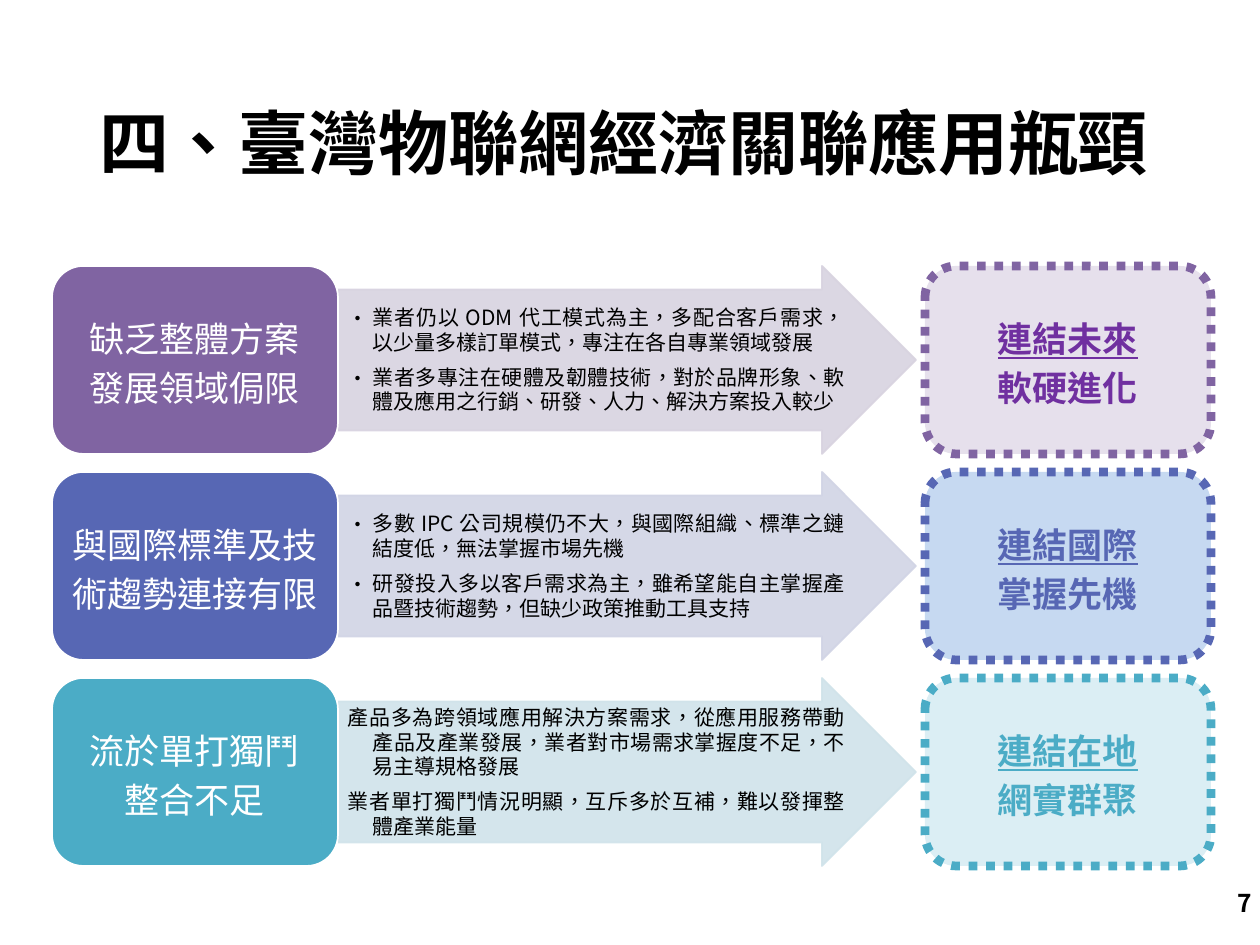
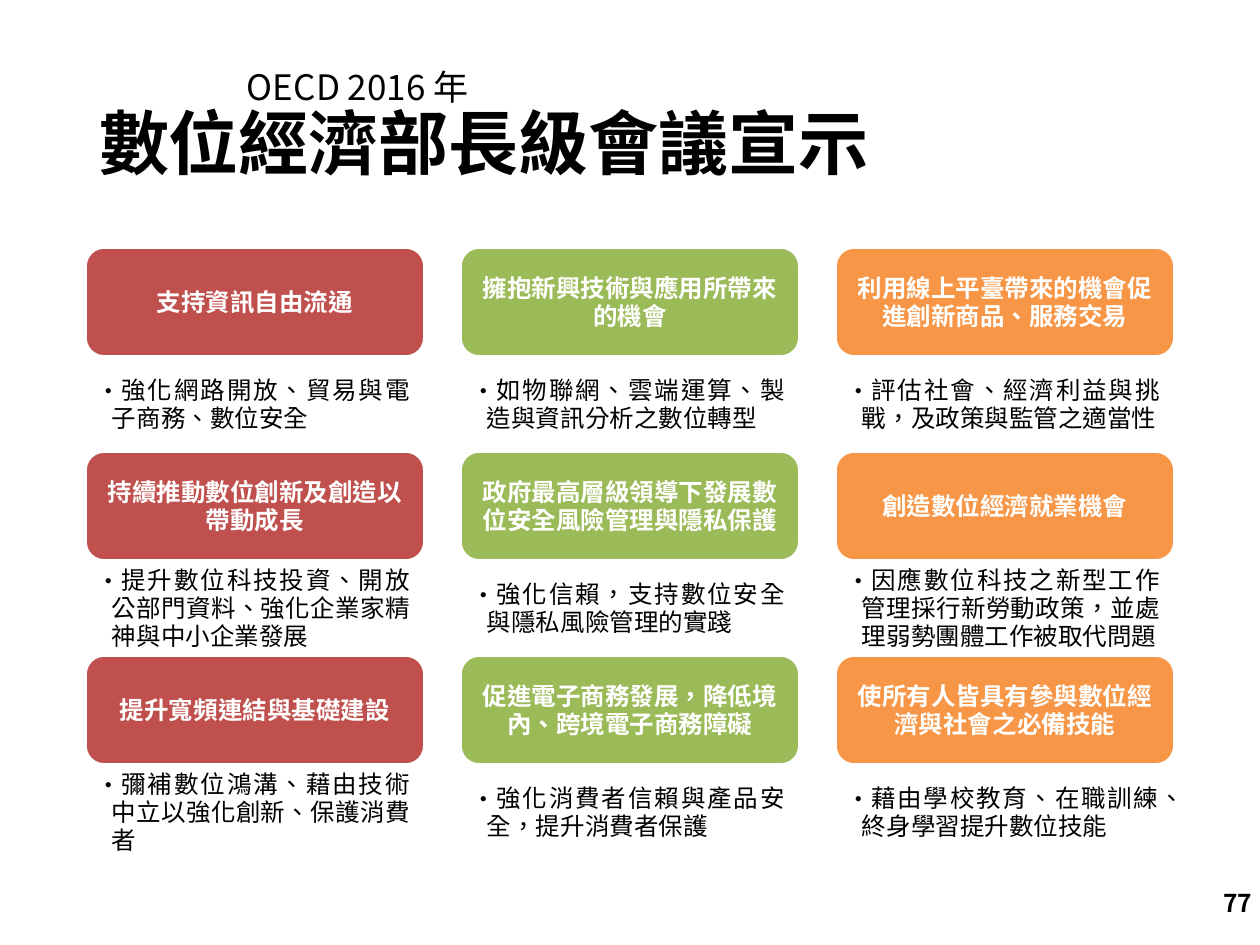
import pptx
import pptx.util
import pptx.dml.color
import pptx.enum.dml
import pptx.enum.shapes
import pptx.enum.text
import pptx.oxml
import pptx.oxml.ns

SHAPES = pptx.enum.shapes.MSO_SHAPE
ALIGN = pptx.enum.text.PP_ALIGN
FONT = "Noto Sans CJK SC"
LANGUAGE = "zh-TW"
BLACK = "000000"
WHITE = "FFFFFF"
PURPLE, INDIGO, TEAL = "8064A2", "5767B4", "4BACC6"
RED, GREEN, ORANGE = "C0504D", "9BBB59", "F79646"
PIXELS_PER_INCH = 126
LEFT_EDGE = 86
DEFAULT_MARGINS = (13, 6, 13, 6)

BOTTLENECKS = [
    dict(
        problem=["缺乏整體方案", "發展領域侷限"],
        causes=[
            "業者仍以 ODM 代工模式為主，多配合客戶需求，以少量多樣訂單模式，專注在各自專業領域發展",
            "業者多專注在硬體及韌體技術，對於品牌形象、軟體及應用之行銷、研發、人力、解決方案投入較少",
        ],
        bullet="•",
        answer=["連結未來", "軟硬進化"],
        color=PURPLE, arrow_fill="D8D3E0", answer_fill="E6E0EC", answer_color="7030A0",
    ),
    dict(
        problem=["與國際標準及技", "術趨勢連接有限"],
        causes=[
            "多數 IPC 公司規模仍不大，與國際組織、標準之鏈結度低，無法掌握市場先機",
            "研發投入多以客戶需求為主，雖希望能自主掌握產品暨技術趨勢，但缺少政策推動工具支持",
        ],
        bullet="•",
        answer=["連結國際", "掌握先機"],
        color=INDIGO, arrow_fill="D1D4E5", answer_fill="C6D9F1", answer_color=INDIGO,
    ),
    dict(
        problem=["流於單打獨鬥", "整合不足"],
        causes=[
            "產品多為跨領域應用解決方案需求，從應用服務帶動產品及產業發展，業者對市場需求掌握度不足，不易主導規格發展",
            "業者單打獨鬥情況明顯，互斥多於互補，難以發揮整體產業能量",
        ],
        bullet=None,
        answer=["連結在地", "網實群聚"],
        color=TEAL, arrow_fill="D0E3EA", answer_fill="DBEEF4", answer_color=TEAL,
    ),
]

DECLARATIONS = [
    (RED, [
        ("支持資訊自由流通", "強化網路開放、貿易與電子商務、數位安全"),
        ("持續推動數位創新及創造以帶動成長",
         "提升數位科技投資、開放公部門資料、強化企業家精神與中小企業發展"),
        ("提升寬頻連結與基礎建設", "彌補數位鴻溝、藉由技術中立以強化創新、保護消費者"),
    ]),
    (GREEN, [
        ("擁抱新興技術與應用所帶來的機會", "如物聯網、雲端運算、製造與資訊分析之數位轉型"),
        ("政府最高層級領導下發展數位安全風險管理與隱私保護",
         "強化信賴，支持數位安全與隱私風險管理的實踐"),
        ("促進電子商務發展，降低境內、跨境電子商務障礙",
         "強化消費者信賴與產品安全，提升消費者保護"),
    ]),
    (ORANGE, [
        ("利用線上平臺帶來的機會促進創新商品、服務交易",
         "評估社會、經濟利益與挑戰，及政策與監管之適當性"),
        ("創造數位經濟就業機會",
         "因應數位科技之新型工作管理採行新勞動政策，並處理弱勢團體工作被取代問題"),
        ("使所有人皆具有參與數位經濟與社會之必備技能",
         "藉由學校教育、在職訓練、終身學習提升數位技能"),
    ]),
]


def px(length):
    return pptx.util.Emu(round(length * 914400 / PIXELS_PER_INCH))


def rgb(color):
    return pptx.dml.color.RGBColor.from_string(color)


def add_element(parent, tag, **attributes):
    element = pptx.oxml.parse_xml(f"<a:{tag} {pptx.oxml.ns.nsdecls('a')}/>")
    for name, value in attributes.items():
        element.set(name, str(value))
    parent.append(element)


def set_hanging_indent(paragraph, indent, bullet):
    properties = paragraph._p.get_or_add_pPr()
    properties.set("marL", str(px(indent)))
    properties.set("indent", str(-px(indent)))
    if bullet:
        add_element(properties, "buFont", typeface=FONT)
        add_element(properties, "buChar", char=bullet)
    else:
        add_element(properties, "buNone")


def write_text(shape, lines, size, color=BLACK, bold=False, align=ALIGN.LEFT,
               line_spacing=None, space_after=None, indent=None, bullet=None,
               underline_first=False, margins=DEFAULT_MARGINS):
    frame = shape.text_frame
    frame.word_wrap = True
    frame.auto_size = pptx.enum.text.MSO_AUTO_SIZE.NONE
    frame.vertical_anchor = pptx.enum.text.MSO_ANCHOR.MIDDLE
    frame.margin_left, frame.margin_top, frame.margin_right, frame.margin_bottom = map(px, margins)
    for index, line in enumerate(lines):
        paragraph = frame.add_paragraph() if index else frame.paragraphs[0]
        paragraph.alignment = align
        if line_spacing:
            paragraph.line_spacing = pptx.util.Pt(line_spacing)
        if space_after:
            paragraph.space_after = pptx.util.Pt(space_after)
        if indent:
            paragraph.level = 1
            set_hanging_indent(paragraph, indent, bullet)
        run = paragraph.add_run()
        run.text = line
        font = run.font
        font.name = FONT
        font.size = pptx.util.Pt(size)
        font.bold = bold
        font.color.rgb = rgb(color)
        if underline_first and index == 0:
            font.underline = True
        properties = run._r.get_or_add_rPr()
        properties.set("lang", LANGUAGE)
        add_element(properties, "ea", typeface=FONT)


def add_text(slide, box, lines, size, **text_format):
    shape = slide.shapes.add_textbox(*map(px, box))
    write_text(shape, lines, size, **text_format)


def add_block(slide, kind, box, fill, line=WHITE, line_width=1):
    shape = slide.shapes.add_shape(kind, *map(px, box))
    shape.shadow.inherit = False
    shape.fill.solid()
    shape.fill.fore_color.rgb = rgb(fill)
    shape.line.color.rgb = rgb(line)
    shape.line.width = pptx.util.Pt(line_width)
    return shape


def add_cause_arrow(slide, top, row):
    arrow = add_block(slide, SHAPES.RIGHT_ARROW, (338, top, 578, 188),
                      row["arrow_fill"], row["arrow_fill"])
    arrow.adjustments[0] = 0.75
    arrow.adjustments[1] = 0.5
    for color in arrow._element.spPr.iter(pptx.oxml.ns.qn("a:srgbClr")):
        add_element(color, "alpha", val=90000)
    write_text(arrow, row["causes"], 12, align=ALIGN.JUSTIFY, line_spacing=14, space_after=6,
               indent=25, bullet=row["bullet"], margins=(10, 0, 0, 0))


def add_bottleneck_row(slide, top, row):
    add_cause_arrow(slide, top, row)
    problem = add_block(slide, SHAPES.ROUNDED_RECTANGLE, (52, top, 286, 188), row["color"])
    write_text(problem, row["problem"], 20, color=WHITE, align=ALIGN.CENTER,
               line_spacing=28, margins=(10, 5, 10, 5))
    answer = add_block(slide, SHAPES.ROUNDED_RECTANGLE, (925, top, 286, 188),
                       row["answer_fill"], row["color"], 5)
    answer.line.dash_style = pptx.enum.dml.MSO_LINE.ROUND_DOT
    write_text(answer, row["answer"], 20, color=row["answer_color"], bold=True,
               align=ALIGN.CENTER, line_spacing=28, underline_first=True)


def add_declaration(slide, left, top, color, heading, detail):
    block = add_block(slide, SHAPES.ROUNDED_RECTANGLE, (left, top, 338, 108), color)
    write_text(block, [heading], 14, color=WHITE, bold=True, align=ALIGN.CENTER,
               line_spacing=16, margins=(8, 8, 8, 8))
    add_text(slide, (left, top + 108, 338, 96), [detail], 14, align=ALIGN.JUSTIFY,
             line_spacing=16, indent=15, bullet="•", margins=(11, 3, 14, 3))


def add_slide(presentation, title, number):
    slide = presentation.slides.add_slide(presentation.slide_layouts.get_by_name("Title Only"))
    shape = slide.shapes.title
    shape.left, shape.top, shape.width, shape.height = map(px, (LEFT_EDGE, 50, 1086, 183))
    write_text(shape, [title], 40, bold=True)
    add_text(slide, (971, 878, 294, 50), [number], 14, bold=True, align=ALIGN.RIGHT)
    return slide


def build_bottlenecks(presentation):
    slide = add_slide(presentation, "四、臺灣物聯網經濟關聯應用瓶頸", "7")
    for index, row in enumerate(BOTTLENECKS):
        add_bottleneck_row(slide, 266 + 206 * index, row)


def build_declarations(presentation):
    slide = add_slide(presentation, "數位經濟部長級會議宣示", "77")
    add_text(slide, (234, 59, 258, 55), ["OECD 2016 年"], 20)
    for column, (color, declarations) in enumerate(DECLARATIONS):
        for row, (heading, detail) in enumerate(declarations):
            add_declaration(slide, LEFT_EDGE + 375 * column, 248 + 204 * row,
                            color, heading, detail)


def main():
    presentation = pptx.Presentation()
    presentation.slide_width = px(1260)
    presentation.slide_height = px(945)
    build_bottlenecks(presentation)
    build_declarations(presentation)
    presentation.save("out.pptx")


if __name__ == "__main__":
    main()
